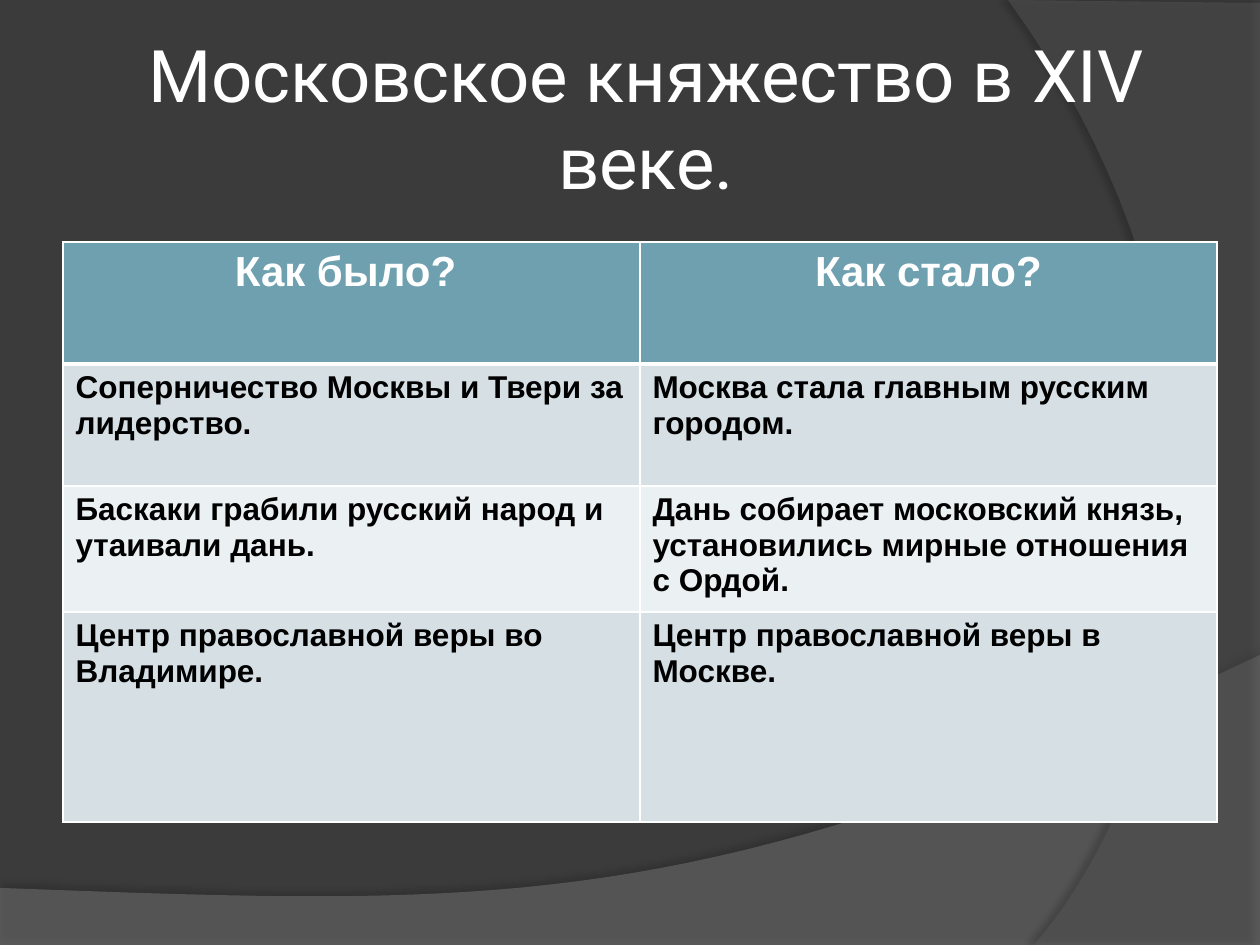
"""Build the slide comparing the Moscow principality before and after the XIV century."""
from dataclasses import dataclass
from typing import Any

from lxml.etree import SubElement
from pptx import Presentation
from pptx.dml.color import RGBColor
from pptx.enum.text import MSO_ANCHOR as Anchor, PP_ALIGN as Align
from pptx.oxml.ns import qn
from pptx.util import Emu, Pt

Point = tuple[int, int]

WHITE = RGBColor(0xFF, 0xFF, 0xFF)
BLACK = RGBColor(0x00, 0x00, 0x00)
CHARCOAL = RGBColor(0x3B, 0x3B, 0x3B)
LIGHT_GRAY = RGBColor(0x7F, 0x7F, 0x7F)
MID_GRAY = RGBColor(0x5E, 0x5E, 0x5E)
TEAL = RGBColor(0x6E, 0xA0, 0xB0)
BANDS = (RGBColor(0xD5, 0xDF, 0xE4), RGBColor(0xEB, 0xF0, 0xF2))

SCALE = 914400 / 126
CURVE_STEPS = 40


@dataclass(frozen=True)
class Wave:
    """A translucent background shape: straight corners, then a Bezier edge."""
    corners: tuple[Point, ...]
    curve: tuple[Point, Point, Point]
    color: RGBColor
    alpha: int
    shadow_alpha: int
    shadow_dist: float
    shadow_dir: int


@dataclass(frozen=True)
class Row:
    """One table row."""
    height: int
    cells: tuple[str, str]


WAVES = (
    Wave(((0, 888), (0, 945), (1260, 945), (1260, 655)),
         ((704, 919), (493, 906), (0, 888)), LIGHT_GRAY, 45, 35, 3.5, 270),
    Wave(((1260, 3), (1260, 945), (1034, 945)),
         ((1178, 780), (1283, 378), (1008, 0)), MID_GRAY, 40, 45, 4, 180),
)
ROWS = (
    Row(122, ("Как было? ", "Как стало?")),
    Row(122, ("Соперничество Москвы и Твери за лидерство.",
              "Москва стала главным русским городом.")),
    Row(122, ("Баскаки грабили русский народ и утаивали дань.",
              "Дань собирает московский князь, установились мирные отношения с Ордой.")),
    Row(210, ("Центр православной веры во Владимире.",
              "Центр православной веры в Москве.")),
)
TITLE_FORMAT = {"size": Pt(41.4), "name": "Roboto"}
HEAD_FORMAT = {"size": Pt(24), "name": "Arial", "bold": True}
BODY_FORMAT = {"size": Pt(18), "name": "Arial", "bold": True}


def px(n: float) -> Emu:
    """Turn px into EMU."""
    return Emu(round(n * SCALE))


def set_attrs(obj: Any, values: dict[str, Any]) -> None:
    """Set attributes from a dict."""
    for name, value in values.items():
        setattr(obj, name, value)


def write(tf: Any, text: str, font: dict[str, Any], color: RGBColor, align: Align) -> None:
    """Write one formatted paragraph."""
    p = tf.paragraphs[0]
    p.alignment = align
    r = p.add_run()
    r.text = text
    set_attrs(r.font, font)
    r.font.color.rgb = color


def add_alpha(color: Any, percent: int) -> None:
    """Make a colour element translucent."""
    SubElement(color, qn("a:alpha"), val=str(percent * 1000))


def bezier(start: Point, curve: tuple[Point, Point, Point]) -> list[tuple[int, int]]:
    """Sample a cubic Bezier curve in EMU."""
    points = []
    for i in range(1, CURVE_STEPS + 1):
        t = i / CURVE_STEPS
        weights = ((1 - t) ** 3, 3 * t * (1 - t) ** 2, 3 * t * t * (1 - t), t ** 3)
        x, y = (sum(w * n for w, n in zip(weights, axis)) for axis in zip(start, *curve))
        points.append((px(x), px(y)))
    return points


def add_wave(s: Any, wave: Wave) -> None:
    """Draw a background wave with its soft shadow."""
    corners = [(px(x), px(y)) for x, y in wave.corners]
    builder = s.shapes.build_freeform(*corners[0])
    builder.add_line_segments(corners[1:] + bezier(wave.corners[-1], wave.curve))
    sp = builder.convert_to_shape()
    sp.fill.solid()
    sp.fill.fore_color.rgb = wave.color
    sp.line.fill.background()
    sp.shadow.inherit = False
    sp_pr = sp.element.spPr
    add_alpha(sp_pr.find(qn("a:solidFill"))[0], wave.alpha)
    shadow = SubElement(sp_pr.find(qn("a:effectLst")), qn("a:outerShdw"),
                        blurRad=str(Pt(4)), dist=str(Pt(wave.shadow_dist)),
                        dir=str(wave.shadow_dir * 60000), algn="ctr", rotWithShape="0")
    add_alpha(SubElement(shadow, qn("a:srgbClr"), val=str(BLACK)), wave.shadow_alpha)


def add_title(s: Any, text: str) -> None:
    """Add the slide title."""
    tf = s.shapes.add_textbox(px(63), px(38), px(1166), px(158)).text_frame
    margins = dict.fromkeys(("margin_left", "margin_right", "margin_top", "margin_bottom"), px(6))
    set_attrs(tf, {"word_wrap": True, "vertical_anchor": Anchor.MIDDLE, **margins})
    write(tf, text, TITLE_FORMAT, WHITE, Align.CENTER)


def add_borders(cell: Any, bottom: int) -> None:
    """Give a cell white borders."""
    tc_pr = cell._tc.get_or_add_tcPr()
    for tag, width in (("lnL", 1), ("lnR", 1), ("lnT", 1), ("lnB", bottom)):
        ln = SubElement(tc_pr, qn(f"a:{tag}"), w=str(Pt(width)))
        SubElement(SubElement(ln, qn("a:solidFill")), qn("a:srgbClr"), val=str(WHITE))


def add_comparison(s: Any, rows: tuple[Row, ...]) -> None:
    """Add the before and after table."""
    height = sum(row.height for row in rows)
    table = s.shapes.add_table(len(rows), 2, px(63), px(242), px(1154), px(height)).table
    for i, row in enumerate(rows):
        table.rows[i].height = px(row.height)
        head = i == 0
        for cell, text in zip(table.rows[i].cells, row.cells):
            add_borders(cell, 3 if head else 1)
            cell.fill.solid()
            cell.fill.fore_color.rgb = TEAL if head else BANDS[(i - 1) % 2]
            write(cell.text_frame, text, HEAD_FORMAT if head else BODY_FORMAT,
                  WHITE if head else BLACK, Align.CENTER if head else Align.LEFT)


def main() -> None:
    """Build and save the slide."""
    prs = Presentation()
    set_attrs(prs, {"slide_width": px(1260), "slide_height": px(945)})
    s = prs.slides.add_slide(prs.slide_layouts[6])
    s.background.fill.solid()
    s.background.fill.fore_color.rgb = CHARCOAL
    for wave in WAVES:
        add_wave(s, wave)
    add_title(s, "Московское княжество в XIV веке.")
    add_comparison(s, ROWS)
    prs.save("out.pptx")


if __name__ == "__main__":
    main()
